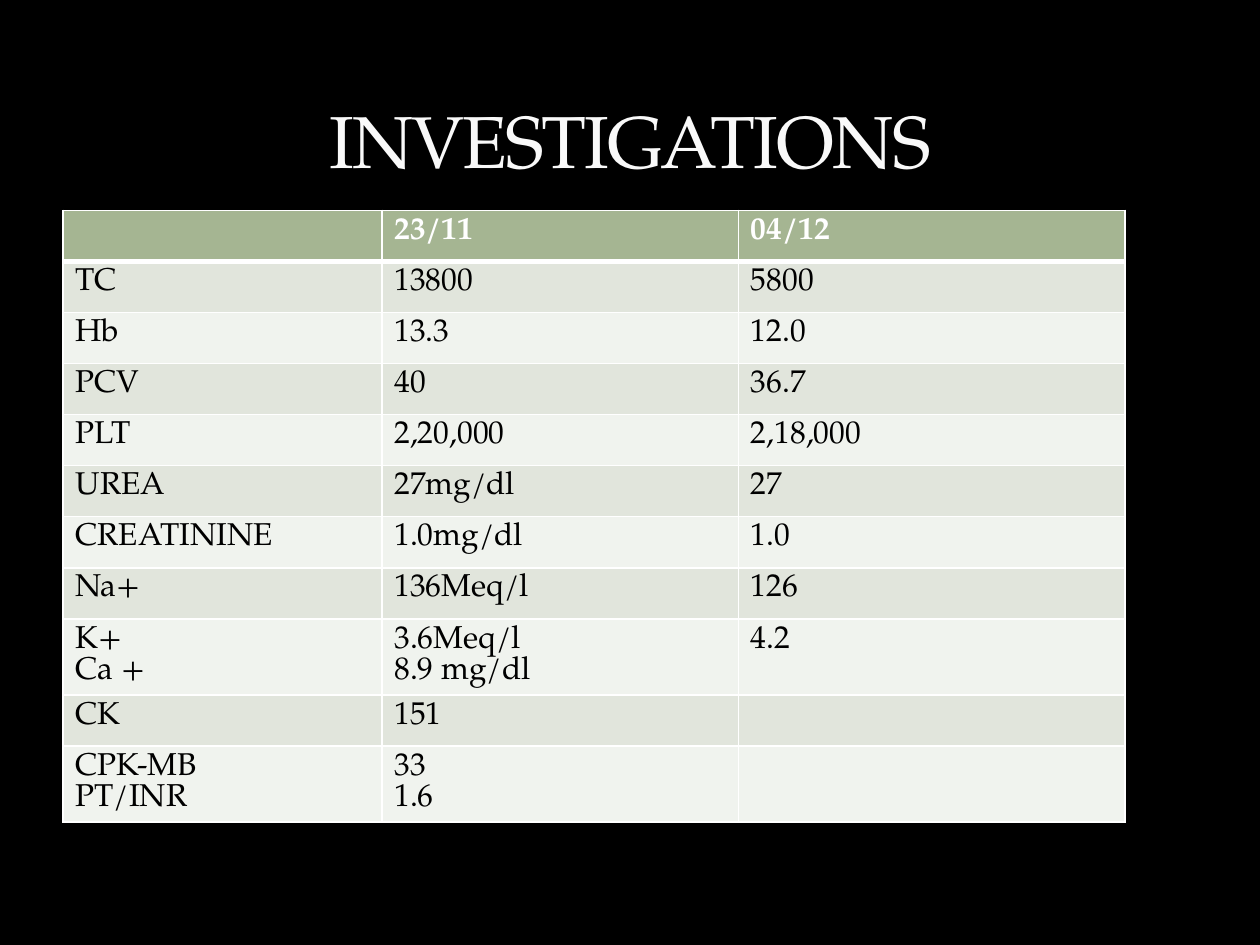
from lxml import etree
from pptx import Presentation
from pptx.dml.color import RGBColor
from pptx.enum import text
from pptx.oxml import ns
from pptx.util import Inches, Pt

COLORS = {
    "background": "000000",
    "title": "F9F9F9",
    "outline": "3C4422",
    "header": "A5B592",
    "odd": "E1E5DC",
    "even": "F0F3EE",
    "body_text": "000000",
    "white": "FFFFFF",
}
FONT = "TeX Gyre Pagella"
COLUMN_WIDTHS = [2.53, 2.83, 3.07]
RESULTS = [
    ["", "23/11", "04/12"],
    ["TC", "13800", "5800"],
    ["Hb", "13.3", "12.0"],
    ["PCV", "40", "36.7"],
    ["PLT", "2,20,000", "2,18,000"],
    ["UREA", "27mg/dl", "27"],
    ["CREATININE", "1.0mg/dl", "1.0"],
    ["Na+", "136Meq/l", "126"],
    ["K+\nCa +", "3.6Meq/l\n8.9 mg/dl", "4.2"],
    ["CK", "151", ""],
    ["CPK-MB\nPT/INR", "33\n1.6", ""],
]


def color(name):
    return RGBColor.from_string(COLORS[name])


def make_line(tag, width, color_name):
    line = etree.Element(ns.qn(tag), w=str(int(Pt(width))))
    fill = etree.SubElement(line, ns.qn("a:solidFill"))
    etree.SubElement(fill, ns.qn("a:srgbClr"), val=COLORS[color_name])
    return line


def add_run(paragraph, wording, size, color_name, bold=False):
    run = paragraph.add_run()
    run.text = wording
    run.font.name = FONT
    run.font.size = Pt(size)
    run.font.bold = bold
    run.font.color.rgb = color(color_name)
    return run


def set_borders(cell, widths):
    properties = cell._tc.get_or_add_tcPr()
    for index, (side, width) in enumerate(widths.items()):
        properties.insert(index, make_line(f"a:ln{side}", width, "white"))


def add_title(slide, left, top, width, height):
    shape = slide.shapes.add_textbox(left, top, width, height)
    frame = shape.text_frame
    frame.word_wrap = True
    frame.vertical_anchor = text.MSO_ANCHOR.BOTTOM
    paragraph = frame.paragraphs[0]
    paragraph.alignment = text.PP_ALIGN.CENTER
    run = add_run(paragraph, "INVESTIGATIONS", 42, "title")
    properties = run.font._element
    properties.set("spc", "-100")
    outline = make_line("a:ln", 0.25, "outline")
    etree.SubElement(outline[0][0], ns.qn("a:alpha"), val="25000")
    properties.insert(0, outline)


def add_results_table(slide, left, top, width, height):
    shape = slide.shapes.add_table(
        len(RESULTS), len(COLUMN_WIDTHS), left, top, width, height
    )
    table = shape.table
    for column, column_width in zip(table.columns, COLUMN_WIDTHS):
        column.width = Inches(column_width)
    for row_index, values in enumerate(RESULTS):
        header = row_index == 0
        fill_name = "header" if header else "odd" if row_index % 2 else "even"
        borders = {
            "L": 1,
            "R": 1,
            "T": 3 if row_index == 1 else 1,
            "B": 3 if header else 1,
        }
        for column_index, value in enumerate(values):
            cell = table.cell(row_index, column_index)
            cell.fill.solid()
            cell.fill.fore_color.rgb = color(fill_name)
            set_borders(cell, borders)
            frame = cell.text_frame
            for line_index, wording in enumerate(value.splitlines()):
                paragraph = frame.add_paragraph() if line_index else frame.paragraphs[0]
                add_run(paragraph, wording, 18, "white" if header else "body_text", header)


def main():
    presentation = Presentation()
    presentation.slide_width = Inches(10)
    presentation.slide_height = Inches(7.5)
    slide = presentation.slides.add_slide(presentation.slide_layouts[6])
    slide.background.fill.solid()
    slide.background.fill.fore_color.rgb = color("background")
    add_results_table(
        slide, Inches(0.5), Inches(1.67), Inches(sum(COLUMN_WIDTHS)), Inches(4.46)
    )
    add_title(slide, Inches(0.5), Inches(0.17), Inches(9), Inches(1.33))
    presentation.save("out.pptx")


if __name__ == "__main__":
    main()
